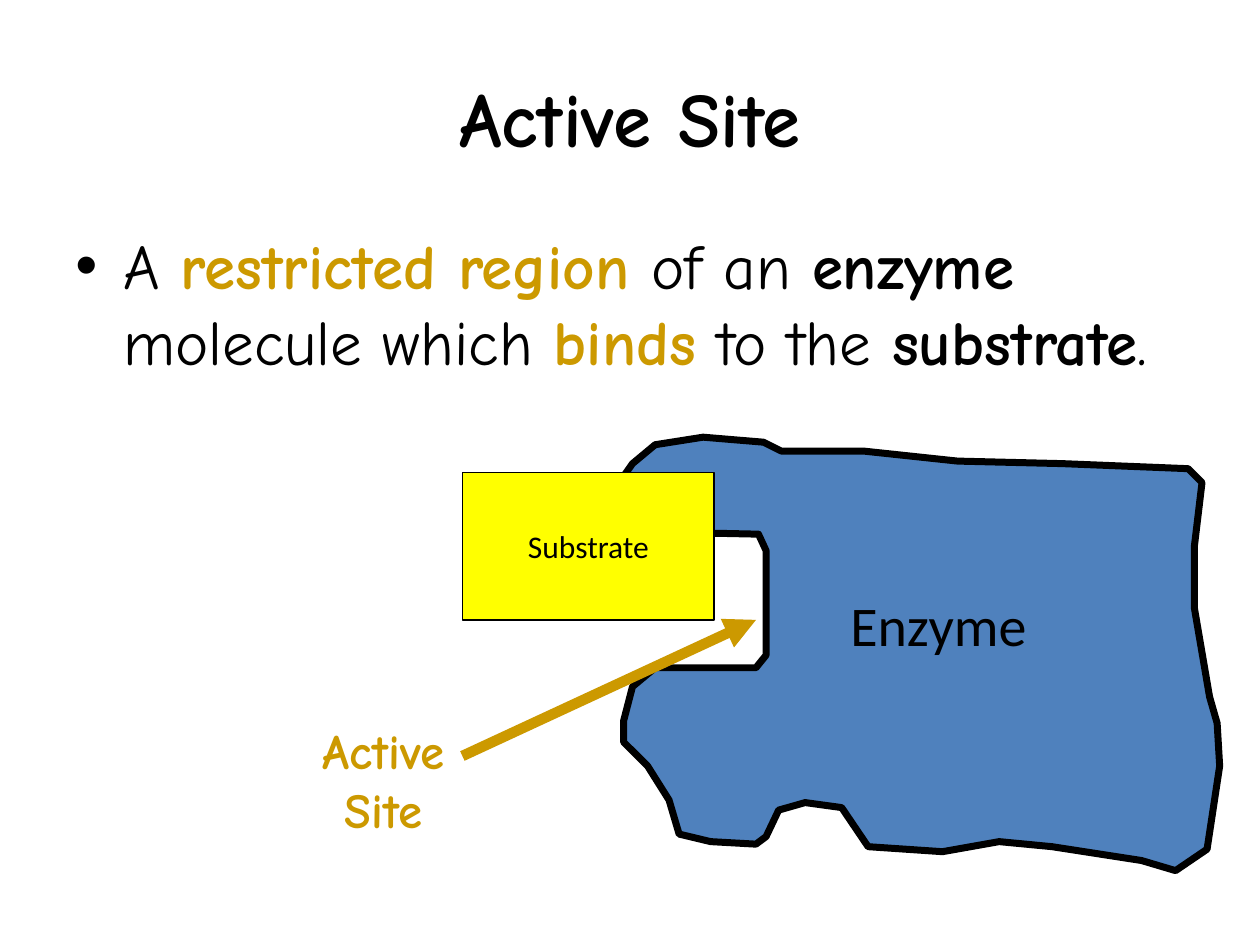
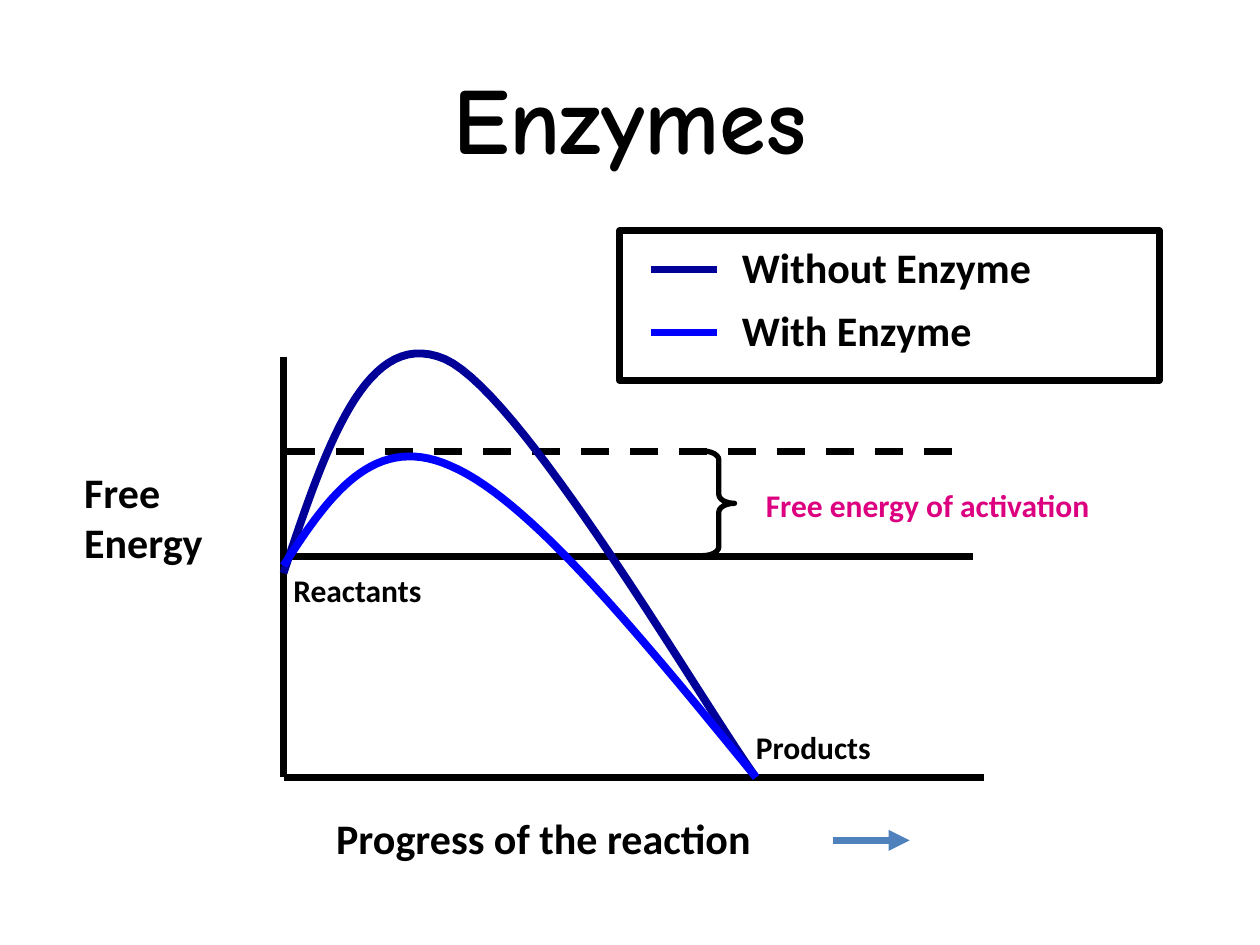
from dataclasses import dataclass

from lxml.etree import SubElement
from pptx import Presentation
from pptx.dml.color import RGBColor
from pptx.enum.dml import MSO_LINE
from pptx.enum.shapes import MSO_CONNECTOR, MSO_SHAPE
from pptx.enum.text import MSO_ANCHOR, MSO_AUTO_SIZE, PP_ALIGN
from pptx.oxml.ns import qn
from pptx.util import Emu, Pt

PX = 9144
BLACK, WHITE = "000000", "FFFFFF"
GOLD, STEEL, YELLOW, PINK = "CC9900", "4F81BD", "FFFF00", "DC0081"
NAVY, BLUE = "000099", "0000FF"
HEADING_FONT, LABEL_FONT = "Comic Neue", "Calibri"
CURVE_STEPS = 30

ENZYME_OUTLINE = [
    (508, 422), (602, 424), (608, 437), (608, 520), (600, 530), (520, 530),
    (502, 545), (495, 572), (495, 589), (514, 608), (531, 635), (539, 662),
    (564, 668), (600, 670), (608, 664), (618, 643), (639, 637), (668, 641),
    (689, 672), (748, 676), (793, 668), (835, 672), (906, 683), (933, 691),
    (958, 674), (968, 608), (966, 574), (960, 553), (948, 483), (948, 433),
    (954, 383), (943, 372), (843, 368), (760, 366), (685, 358), (620, 358),
    (606, 351), (558, 347), (520, 353), (502, 368), (483, 395), (483, 414),
]


@dataclass
class Span:
    text: str
    size: int
    color: str = BLACK
    bold: bool = False
    font: str = LABEL_FONT


def px(value):
    return Emu(round(value * PX))


def rgb(value):
    return RGBColor.from_string(value)


def add_spans(para, spans):
    for span in spans:
        run = para.add_run()
        run.text = span.text
        run.font.size = Pt(span.size)
        run.font.name = span.font
        run.font.bold = span.bold
        run.font.color.rgb = rgb(span.color)


def add_text(page, bounds, lines, align=PP_ALIGN.LEFT, anchor=MSO_ANCHOR.TOP, wrap=False):
    box = page.shapes.add_textbox(*map(px, bounds))
    frame = box.text_frame
    frame.word_wrap = wrap
    frame.auto_size = MSO_AUTO_SIZE.NONE if wrap else MSO_AUTO_SIZE.SHAPE_TO_FIT_TEXT
    frame.vertical_anchor = anchor
    for index, spans in enumerate(lines):
        para = frame.add_paragraph() if index else frame.paragraphs[0]
        para.alignment = align
        add_spans(para, spans)
    return box


def add_title(page, text, size):
    add_text(page, (50, 30, 900, 125), [[Span(text, size, bold=True, font=HEADING_FONT)]],
             PP_ALIGN.CENTER, MSO_ANCHOR.MIDDLE, wrap=True)


def add_label(page, bounds, text, size, color=BLACK, bold=True):
    add_text(page, bounds, [[Span(line, size, color, bold)] for line in text.split("\n")])


def add_bullet(para):
    properties = para._p.get_or_add_pPr()
    properties.set("marL", str(px(38)))
    properties.set("indent", str(px(-38)))
    SubElement(properties, qn("a:buFont"), typeface="Arial")
    SubElement(properties, qn("a:buChar"), char="•")


def style_shape(shape, fill, line, width):
    shape.shadow.inherit = False
    if fill:
        shape.fill.solid()
        shape.fill.fore_color.rgb = rgb(fill)
    else:
        shape.fill.background()
    shape.line.color.rgb = rgb(line)
    shape.line.width = Pt(width)


def add_box(page, kind, bounds, fill, width):
    shape = page.shapes.add_shape(kind, *map(px, bounds))
    style_shape(shape, fill, BLACK, width)
    return shape


def add_outline(page, points, fill, line, width, close):
    scaled = [(px(x), px(y)) for x, y in points]
    builder = page.shapes.build_freeform(*scaled[0], scale=1.0)
    builder.add_line_segments(scaled[1:], close=close)
    style_shape(builder.convert_to_shape(), fill, line, width)


def bezier_point(controls, position):
    rest = 1 - position
    weights = (rest ** 3, 3 * rest ** 2 * position, 3 * rest * position ** 2, position ** 3)
    return tuple(sum(weight * point[axis] for weight, point in zip(weights, controls))
                 for axis in (0, 1))


def add_curve(page, controls, color):
    points = [controls[0]]
    for start in range(0, len(controls) - 1, 3):
        points += [bezier_point(controls[start:start + 4], step / CURVE_STEPS)
                   for step in range(1, CURVE_STEPS + 1)]
    add_outline(page, points, None, color, 4.5, close=False)


def add_line(page, start, end, color=BLACK, width=4, dashed=False, arrow=False):
    line = page.shapes.add_connector(MSO_CONNECTOR.STRAIGHT, *map(px, start + end))
    line.line.color.rgb = rgb(color)
    line.line.width = Pt(width)
    if dashed:
        line.line.dash_style = MSO_LINE.DASH
    if arrow:
        SubElement(line.line._get_or_add_ln(), qn("a:tailEnd"), type="triangle")
    SubElement(line._element.spPr, qn("a:effectLst"))


def add_definition(page):
    def plain(text):
        return Span(text, 36, font=HEADING_FONT)

    def strong(text, color=BLACK):
        return Span(text, 36, color, True, HEADING_FONT)

    box = add_text(page, (50, 175, 900, 495), [[
        plain("A "), strong("restricted region ", GOLD), plain("of an "), strong("enzyme"),
        plain(" molecule which "), strong("binds", GOLD), plain(" to the "),
        strong("substrate"), plain("."),
    ]], wrap=True)
    add_bullet(box.text_frame.paragraphs[0])


def build_active_site(page):
    add_title(page, "Active Site", 44)
    add_definition(page)
    add_outline(page, ENZYME_OUTLINE, STEEL, BLACK, 4, close=True)
    add_label(page, (665, 464, 177, 63), "Enzyme", 32, bold=False)
    substrate = add_box(page, MSO_SHAPE.RECTANGLE, (367, 375, 200, 117), YELLOW, 1)
    substrate.text_frame.word_wrap = False
    substrate.text_frame.vertical_anchor = MSO_ANCHOR.MIDDLE
    para = substrate.text_frame.paragraphs[0]
    para.alignment = PP_ALIGN.CENTER
    add_spans(para, [Span("Substrate", 18)])
    add_text(page, (217, 567, 175, 103),
             [[Span("Active Site", 28, GOLD, True, HEADING_FONT)]],
             PP_ALIGN.CENTER, wrap=True)
    add_line(page, (367, 600), (600, 492), GOLD, 6, arrow=True)


def add_legend(page):
    add_box(page, MSO_SHAPE.RECTANGLE, (492, 183, 428, 119), WHITE, 4)
    entries = [("Without Enzyme", NAVY, 283), ("With Enzyme", BLUE, 232)]
    for row, (text, color, width) in enumerate(entries):
        top = 187 + 50 * row
        add_line(page, (517, top + 27), (569, top + 27), color)
        add_label(page, (579, top, width, 50), text, 24)


def build_energy_diagram(page):
    add_title(page, "Enzymes", 54)
    add_line(page, (225, 283), (225, 617))
    add_line(page, (225, 617), (781, 617))
    add_label(page, (57, 365, 133, 90), "Free\nEnergy", 24)
    add_label(page, (257, 640, 403, 50), "Progress of the reaction", 24)
    add_line(page, (661, 667), (722, 667), STEEL, arrow=True)
    add_line(page, (228, 442), (772, 442))
    add_line(page, (228, 358), (772, 358), dashed=True)
    add_label(page, (223, 448, 139, 40), "Reactants", 18)
    add_label(page, (590, 573, 128, 40), "Products", 18)
    add_label(page, (598, 381, 316, 40), "Free energy of activation", 18, PINK)
    brace = add_box(page, MSO_SHAPE.RIGHT_BRACE, (558, 358, 25, 83), None, 3)
    brace.adjustments[0] = 0.28
    add_legend(page)
    add_curve(page, [(225, 455), (258, 357), (290, 258), (353, 285),
                     (415, 312), (559, 561), (600, 617)], NAVY)
    add_curve(page, [(225, 449), (260, 395), (296, 342), (358, 370),
                     (421, 397), (510, 507), (600, 617)], BLUE)


def main():
    deck = Presentation()
    deck.slide_width, deck.slide_height = px(1000), px(750)
    for build in (build_active_site, build_energy_diagram):
        build(deck.slides.add_slide(deck.slide_layouts[6]))
    deck.save("out.pptx")


if __name__ == "__main__":
    main()
